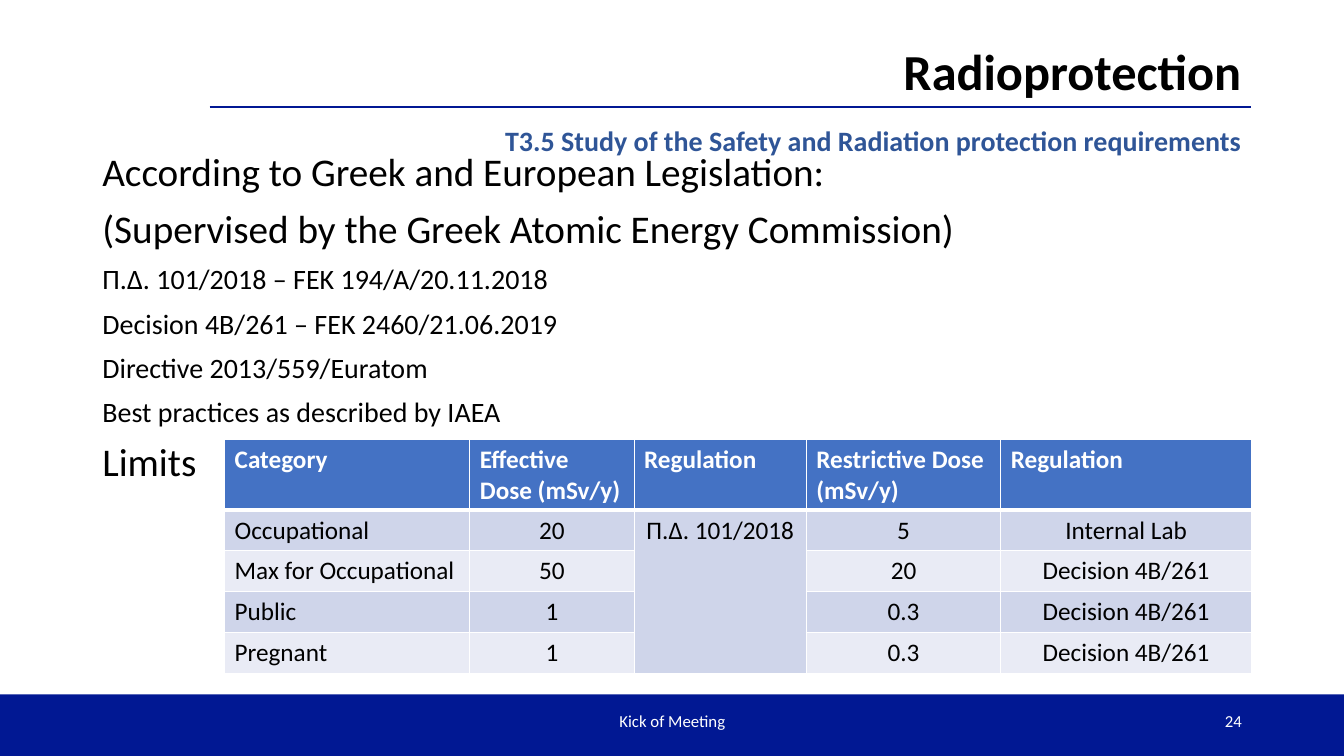
from lxml.etree import SubElement
from pptx import Presentation
from pptx.dml.color import RGBColor
from pptx.enum.shapes import MSO_CONNECTOR, MSO_SHAPE
from pptx.enum.text import MSO_ANCHOR, PP_ALIGN
from pptx.oxml.ns import qn
from pptx.util import Cm, Pt

NAVY = RGBColor(0x01, 0x18, 0x93)
BLUE = RGBColor(0x2F, 0x55, 0x97)
HEADER_BLUE = RGBColor(0x44, 0x72, 0xC4)
BAND_DARK = RGBColor(0xCF, 0xD5, 0xEA)
BAND_LIGHT = RGBColor(0xE9, 0xEB, 0xF5)
BLACK = RGBColor(0, 0, 0)
WHITE = RGBColor(0xFF, 0xFF, 0xFF)


def add_run(paragraph, text, size, color, bold=False):
    run = paragraph.add_run()
    run.text = text
    run.font.name = "Calibri"
    run.font.size = Pt(size)
    run.font.bold = bold
    run.font.color.rgb = color


def add_text(left, top, width, height, lines, color, bold=False,
             align=PP_ALIGN.LEFT, anchor=MSO_ANCHOR.TOP, spacing=1.0):
    frame = slide.shapes.add_textbox(Cm(left), Cm(top), Cm(width), Cm(height)).text_frame
    frame.word_wrap = True
    frame.vertical_anchor = anchor
    for index, (text, size) in enumerate(lines):
        paragraph = frame.add_paragraph() if index else frame.paragraphs[0]
        paragraph.alignment = align
        paragraph.line_spacing = spacing
        if index:
            paragraph.space_before = Pt(10)
        add_run(paragraph, text, size, color, bold)


presentation = Presentation()
presentation.slide_width = Cm(33.87)
presentation.slide_height = Cm(19.05)
slide = presentation.slides.add_slide(presentation.slide_layouts[6])

footer_band = slide.shapes.add_shape(
    MSO_SHAPE.RECTANGLE, 0, Cm(17.5), Cm(33.87), Cm(1.55))
footer_band.shadow.inherit = False
footer_band.fill.solid()
footer_band.fill.fore_color.rgb = NAVY
footer_band.line.fill.background()

title_rule = slide.shapes.add_connector(
    MSO_CONNECTOR.STRAIGHT, Cm(5.28), Cm(2.69), Cm(31.52), Cm(2.69))
title_rule.line.color.rgb = NAVY
title_rule.line.width = Pt(1.5)
SubElement(title_rule._element.spPr, qn("a:effectLst"))

add_text(5.28, 1.02, 26.26, 1.68, [("Radioprotection", 36)], BLACK, True,
         PP_ALIGN.RIGHT, MSO_ANCHOR.MIDDLE, 0.9)
add_text(11.23, 17.65, 11.43, 1.02, [("Kick of Meeting", 12)], WHITE,
         align=PP_ALIGN.CENTER, anchor=MSO_ANCHOR.MIDDLE)
add_text(23.93, 17.65, 7.62, 1.02, [("24", 12)], WHITE,
         align=PP_ALIGN.RIGHT, anchor=MSO_ANCHOR.MIDDLE)

legislation = [
    ("According to Greek and European Legislation:", 28),
    ("(Supervised by the Greek Atomic Energy Commission)", 28),
    ("Π.Δ. 101/2018 – FEK 194/A/20.11.2018", 20),
    ("Decision 4B/261 – FEK 2460/21.06.2019", 20),
    ("Directive 2013/559/Euratom", 20),
    ("Best practices as described by IAEA", 20),
    ("Limits", 28),
]
add_text(2.33, 3.73, 29.21, 12.57, legislation, BLACK, spacing=0.9)

dose_limits = [
    ["Category", "Effective Dose (mSv/y)", "Regulation",
     "Restrictive Dose (mSv/y)", "Regulation"],
    ["Occupational", "20", "Π.Δ. 101/2018", "5", "Internal Lab"],
    ["Max for Occupational", "50", "", "20", "Decision 4B/261"],
    ["Public", "1", "", "0.3", "Decision 4B/261"],
    ["Pregnant", "1", "", "0.3", "Decision 4B/261"],
]
column_widths = [6.18, 4.14, 4.34, 4.9, 6.32]
row_heights = [1.78] + [1.03] * 4
limits_table = slide.shapes.add_table(
    len(dose_limits), len(column_widths), Cm(5.66), Cm(11.07),
    Cm(sum(column_widths)), Cm(sum(row_heights))).table
for column, width in zip(limits_table.columns, column_widths):
    column.width = Cm(width)
for row, height in zip(limits_table.rows, row_heights):
    row.height = Cm(height)

for row_index, values in enumerate(dose_limits):
    is_header = row_index == 0
    band = HEADER_BLUE if is_header else (BAND_LIGHT, BAND_DARK)[row_index % 2]
    for column_index, value in enumerate(values):
        cell = limits_table.cell(row_index, column_index)
        properties = cell._tc.get_or_add_tcPr()
        for side in ("lnL", "lnR", "lnT", "lnB"):
            under_header = (row_index, side) in ((0, "lnB"), (1, "lnT"))
            border = SubElement(properties, qn(f"a:{side}"),
                                w=str(Pt(3 if under_header else 1)))
            border_fill = SubElement(border, qn("a:solidFill"))
            SubElement(border_fill, qn("a:srgbClr"), val=str(WHITE))
        cell.fill.solid()
        cell.fill.fore_color.rgb = band
        if value:
            paragraph = cell.text_frame.paragraphs[0]
            if not is_header and column_index:
                paragraph.alignment = PP_ALIGN.CENTER
            add_run(paragraph, value, 18, WHITE if is_header else BLACK, is_header)
limits_table.cell(1, 2).merge(limits_table.cell(4, 2))

add_text(5.28, 3, 26.26, 1.11,
         [("T3.5 Study of the Safety and Radiation protection requirements", 20)],
         BLUE, True, PP_ALIGN.RIGHT)

presentation.save("out.pptx")
